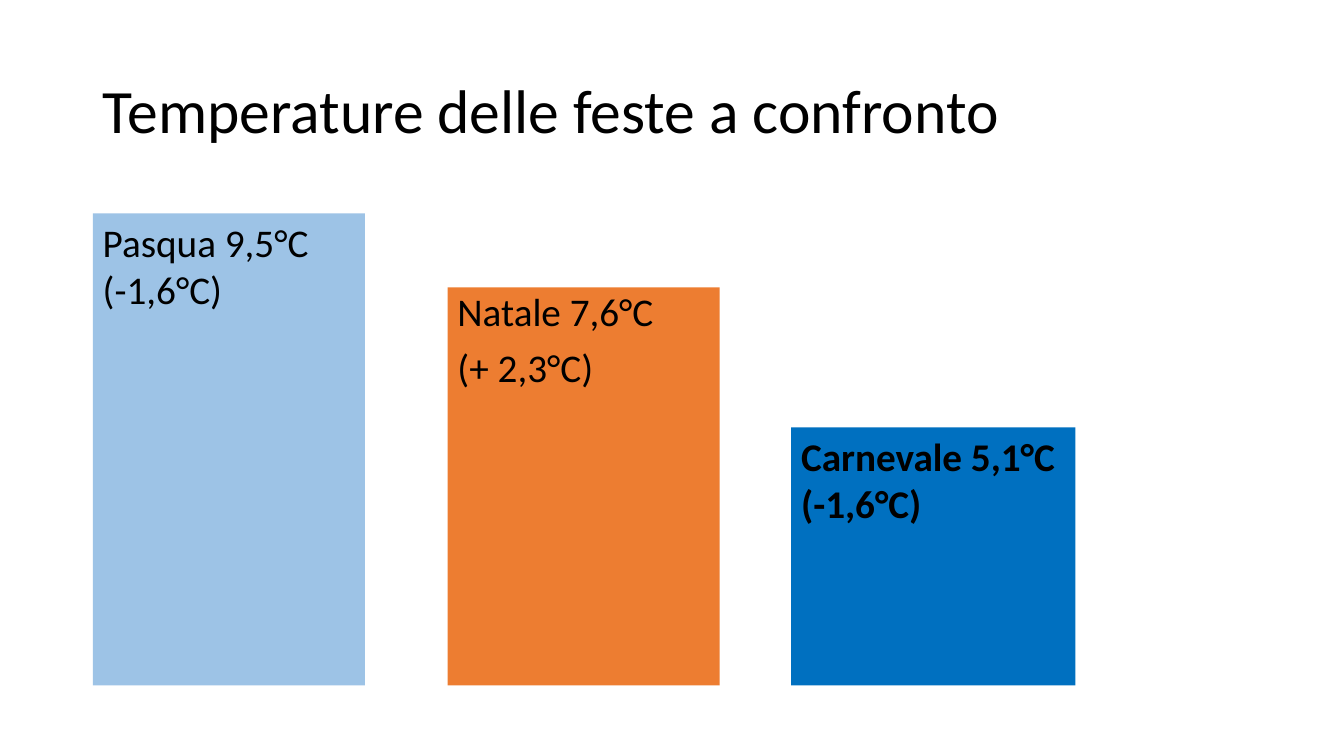
from dataclasses import dataclass

from pptx import Presentation
from pptx.dml.color import RGBColor
from pptx.enum.shapes import MSO_SHAPE
from pptx.enum.text import MSO_ANCHOR, MSO_AUTO_SIZE, PP_ALIGN
from pptx.util import Cm, Pt


@dataclass(frozen=True)
class Theme:
    font: str = "Calibri"
    title_size: int = 44
    label_size: int = 28
    text: str = "000000"
    easter: str = "9DC3E6"
    christmas: str = "ED7D31"
    carnival: str = "0070C0"


THEME = Theme()
BASELINE = 17.27  # common foot of the columns, in cm

# left, width, height (cm), fill, label lines, bold, line spacing, space between lines
COLUMNS = [
    (11.28, 6.86, 10.03, THEME.christmas, ["Natale 7,6°C", "(+ 2,3°C)"], False, 0.9, 10),
    (2.34, 6.86, 11.89, THEME.easter, ["Pasqua 9,5°C", "(-1,6°C)"], False, 1.0, 0),
    (19.94, 7.16, 6.5, THEME.carnival, ["Carnevale 5,1°C", "(-1,6°C)"], True, 1.0, 0),
]


def write_lines(tf, lines, size, bold=False, spacing=1.0, gap=0):
    tf.word_wrap = True
    tf.auto_size = MSO_AUTO_SIZE.NONE
    tf.text = "\n".join(lines)
    for i, p in enumerate(tf.paragraphs):
        p.alignment = PP_ALIGN.LEFT
        p.line_spacing = spacing
        p.space_before = Pt(gap if i else 0)
        for r in p.runs:
            r.font.name = THEME.font
            r.font.size = Pt(size)
            r.font.bold = bold
            r.font.color.rgb = RGBColor.from_string(THEME.text)


def add_title(s, text, left, top, width, height):
    title = s.shapes.title
    title.left, title.top = Cm(left), Cm(top)
    title.width, title.height = Cm(width), Cm(height)
    write_lines(title.text_frame, [text], THEME.title_size, spacing=0.9)
    title.text_frame.vertical_anchor = MSO_ANCHOR.MIDDLE


def add_column(s, left, width, height, fill, lines, bold, spacing, gap):
    sp = s.shapes.add_shape(MSO_SHAPE.RECTANGLE, Cm(left), Cm(BASELINE - height),
                            Cm(width), Cm(height))
    sp.shadow.inherit = False
    sp.fill.solid()
    sp.fill.fore_color.rgb = RGBColor.from_string(fill)
    sp.line.fill.background()
    write_lines(sp.text_frame, lines, THEME.label_size, bold, spacing, gap)
    sp.text_frame.vertical_anchor = MSO_ANCHOR.TOP


def main():
    prs = Presentation()
    prs.slide_width, prs.slide_height = Cm(33.87), Cm(19.05)
    s = prs.slides.add_slide(prs.slide_layouts[5])

    # Title
    add_title(s, "Temperature delle feste a confronto", 2.34, 1.01, 29.21, 3.68)

    # Temperature columns
    for column in COLUMNS:
        add_column(s, *column)

    prs.save("out.pptx")


if __name__ == "__main__":
    main()
